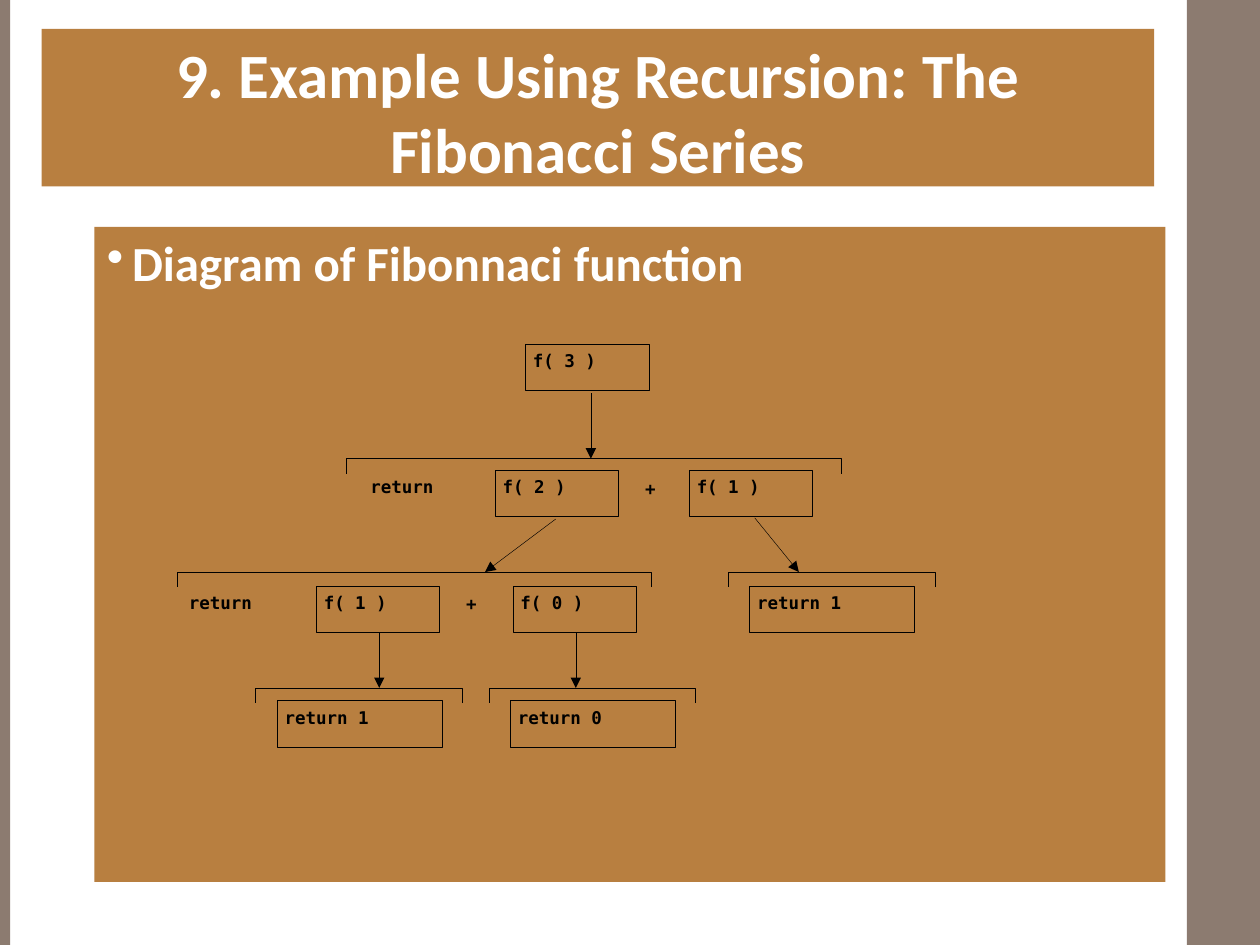
from lxml import etree
from pptx import Presentation
from pptx import util as u
from pptx.dml.color import RGBColor
from pptx.enum import shapes, text
from pptx.oxml.ns import qn

WIDTH, HEIGHT = 10, 7.5
BROWN, TAUPE, WHITE, BLACK = "B87F40", "8C7B70", "FFFFFF", "000000"
SANS, MONO = "Calibri", "DejaVu Sans Mono"
THIN = 0.25
CALL, RESULT, BOX_H = 0.98, 1.31, 0.37
TICK = 0.12

BANDS = [(0, 0.08), (9.42, 0.58)]
TITLE = "9. Example Using Recursion: The Fibonacci Series"
HEADING = "Diagram of Fibonnaci function"

# Each level of the call tree: top of its boxes, then (left, width, label)
BOXES = [
    (2.73, [(4.17, CALL, "f( 3 )")]),
    (3.73, [(3.93, CALL, "f( 2 )"), (5.47, CALL, "f( 1 )")]),
    (4.65, [(2.51, CALL, "f( 1 )"), (4.07, CALL, "f( 0 )"),
            (5.95, RESULT, "return 1")]),
    (5.56, [(2.2, RESULT, "return 1"), (4.05, RESULT, "return 0")]),
]
# Words between the boxes: left, top, width, label
WORDS = [
    (2.94, 3.78, 0.9, "return"), (5.12, 3.79, 0.22, "+"),
    (1.5, 4.7, 0.9, "return"), (3.7, 4.71, 0.22, "+"),
]
# Brackets by level: top, then (left, right)
BRACKETS = [
    (3.64, [(2.75, 6.68)]),
    (4.54, [(1.41, 5.17), (5.78, 7.42)]),
    (5.46, [(2.03, 3.67), (3.88, 5.52)]),
]
# Arrows run from a call down to the bracket it opens: x1, y1, x2, y2
ARROWS = [
    (4.69, 3.12, 4.69, 3.64),
    (4.41, 4.12, 3.85, 4.54), (5.99, 4.11, 6.34, 4.54),
    (3.01, 5.02, 3.01, 5.46), (4.57, 5.02, 4.57, 5.46),
]


def color(code):
    return RGBColor.from_string(code)


def ink(line):
    line.color.rgb = color(BLACK)
    line.width = u.Pt(THIN)


def rect(slide, x, y, w, h, fill=None, edge=False):
    box = slide.shapes.add_shape(shapes.MSO_SHAPE.RECTANGLE,
                                 *map(u.Inches, (x, y, w, h)))
    box.shadow.inherit = False
    if fill:
        box.fill.solid()
        box.fill.fore_color.rgb = color(fill)
    else:
        box.fill.background()
    if edge:
        ink(box.line)
    else:
        box.line.fill.background()
    return box


def write(box, words, size=10, font=MONO, tint=BLACK, align="LEFT",
          inset=(0, 0), wrap=True, bullet=None):
    frame = box.text_frame
    frame.word_wrap = wrap
    frame.vertical_anchor = text.MSO_ANCHOR.TOP
    frame.margin_left = frame.margin_right = u.Inches(inset[0])
    frame.margin_top = frame.margin_bottom = u.Inches(inset[1])
    para = frame.paragraphs[0]
    para.alignment = getattr(text.PP_ALIGN, align)
    if bullet:
        props = para._p.get_or_add_pPr()
        hang = u.Inches(0.2)
        props.set("marL", str(hang))
        props.set("indent", str(-hang))
        etree.SubElement(props, qn("a:buChar")).set("char", bullet)
    run = para.add_run()
    run.text = words
    run.font.name, run.font.size, run.font.bold = font, u.Pt(size), True
    run.font.color.rgb = color(tint)


def bracket(slide, left, right, top):
    low = top + TICK
    pen = slide.shapes.build_freeform(u.Inches(right), u.Inches(low))
    pen.add_line_segments([(u.Inches(x), u.Inches(y)) for x, y in
                           [(right, top), (left, top), (left, low)]],
                          close=False)
    shape = pen.convert_to_shape()
    shape.shadow.inherit = False
    shape.fill.background()
    ink(shape.line)


def arrow(slide, ends):
    link = slide.shapes.add_connector(shapes.MSO_CONNECTOR.STRAIGHT,
                                      *map(u.Inches, ends))
    ink(link.line)
    etree.SubElement(link.line._get_or_add_ln(),
                     qn("a:tailEnd")).set("type", "triangle")
    etree.SubElement(link._element.spPr, qn("a:effectLst"))


def main():
    deck = Presentation()
    deck.slide_width, deck.slide_height = u.Inches(WIDTH), u.Inches(HEIGHT)
    slide = deck.slides.add_slide(deck.slide_layouts[6])

    for x, w in BANDS:
        rect(slide, x, 0, w, HEIGHT, TAUPE)
    write(rect(slide, 0.33, 0.23, 8.83, 1.25, BROWN), TITLE, size=36,
          font=SANS, tint=WHITE, align="CENTER", inset=(0.1, 0.05))
    write(rect(slide, 0.75, 1.8, 8.5, 5.2, BROWN), HEADING, size=28,
          font=SANS, tint=WHITE, inset=(0.1, 0.05), bullet="•")

    for top, spans in BRACKETS:
        for left, right in spans:
            bracket(slide, left, right, top)
    for top, row in BOXES:
        for left, width, label in row:
            write(rect(slide, left, top, width, BOX_H, edge=True), label,
                  inset=(0.06, 0.05), wrap=False)
    for ends in ARROWS:
        arrow(slide, ends)
    for x, y, w, label in WORDS:
        box = slide.shapes.add_textbox(*map(u.Inches, (x, y, w, 0.29)))
        write(box, label)

    deck.save("out.pptx")


if __name__ == "__main__":
    main()
